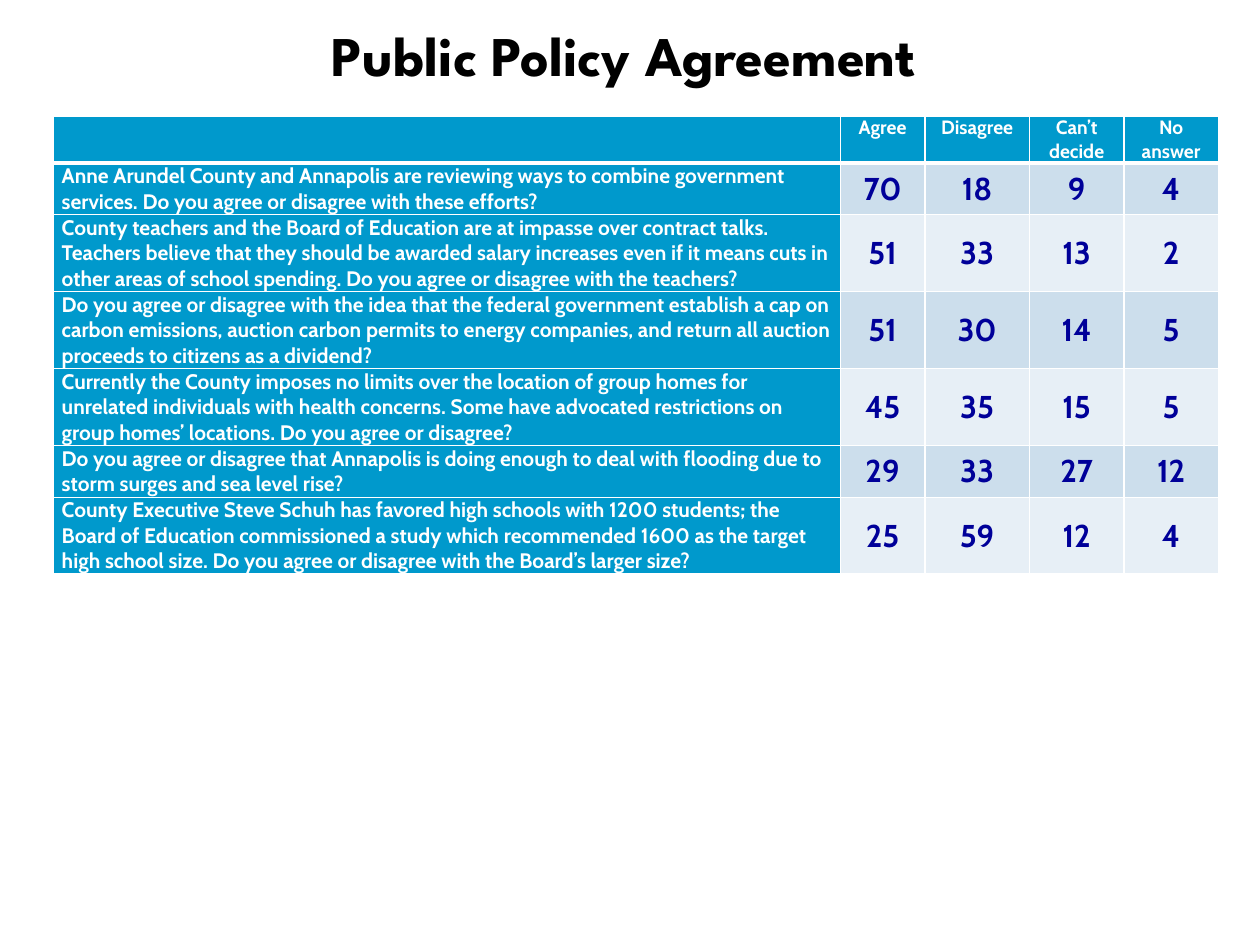
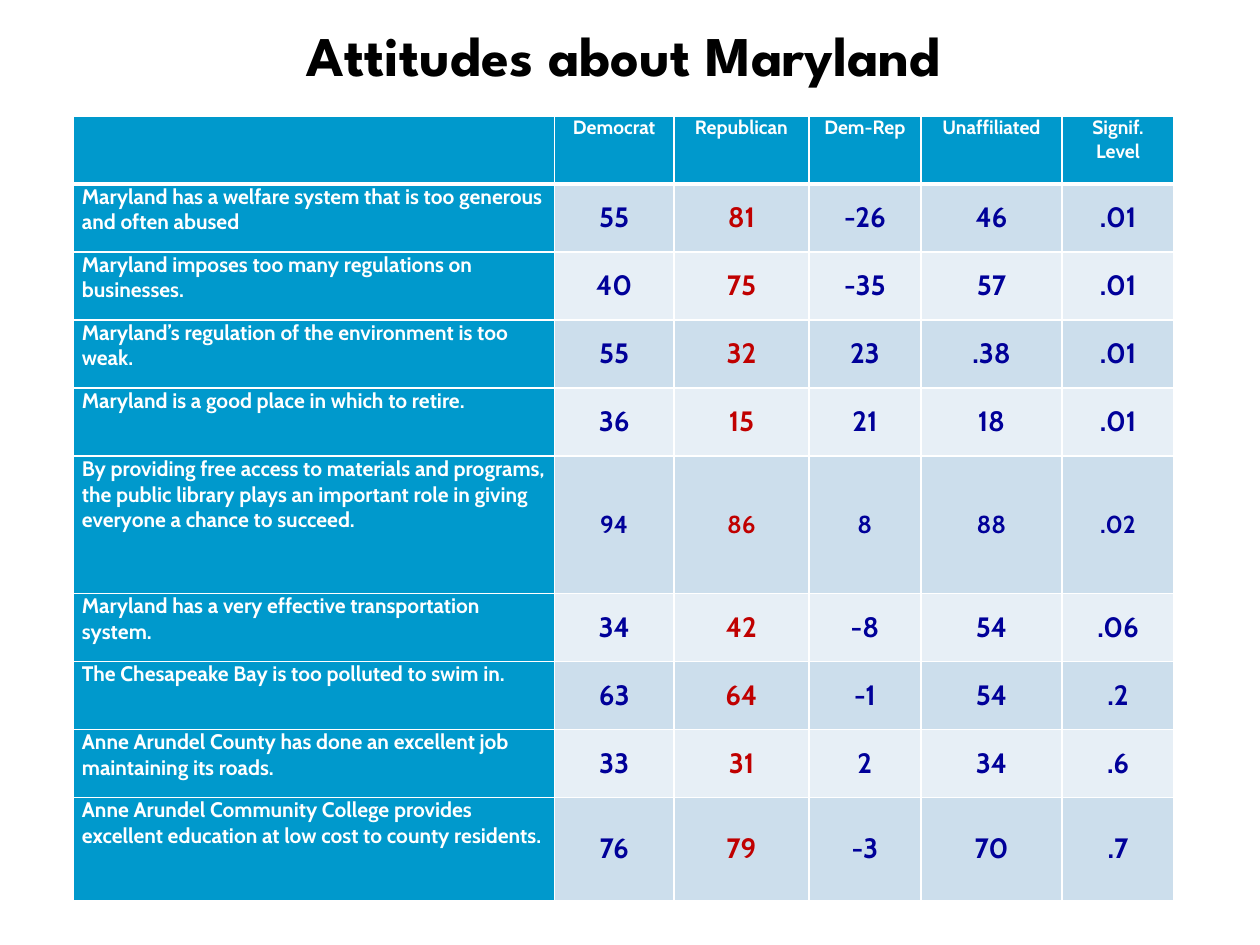
import pptx
import pptx.util
import pptx.dml.color
import pptx.enum.text
import pptx.oxml
import pptx.oxml.ns

Inches = pptx.util.Inches
Pt = pptx.util.Pt
ALIGN = pptx.enum.text.PP_ALIGN
ANCHOR = pptx.enum.text.MSO_ANCHOR

# Shared look
HUES = {"head": "0099CC", "odd": "CCDEEC", "even": "E7EFF6", "white": "FFFFFF",
        "black": "000000", "navy": "000099", "red": "C00000"}
TITLE = {"name": "League Spartan", "size": Pt(32), "bold": True}
CELL = {"name": "Cabin", "bold": True}
INSET = {"margin_left": Inches(0.07), "margin_right": Inches(0.07),
         "margin_top": 0, "margin_bottom": 0}

# Slide content: each row is a question and its figures
POLICY_HEAD = ["", "Agree", "Disagree", "Can’t decide", "No answer"]
POLICY = [
    ("Anne Arundel County and Annapolis are reviewing ways to combine government "
     "services. Do you agree or disagree with these efforts?", "70 18 9 4"),
    ("County teachers and the Board of Education are at impasse over contract talks. "
     "Teachers believe that they should be awarded salary increases even if it means "
     "cuts in other areas of school spending. Do you agree or disagree with the "
     "teachers?", "51 33 13 2"),
    ("Do you agree or disagree with the idea that the federal government establish a "
     "cap on carbon emissions, auction carbon permits to energy companies, and return "
     "all auction proceeds to citizens as a dividend?", "51 30 14 5"),
    ("Currently the County imposes no limits over the location of group homes for "
     "unrelated individuals with health concerns. Some have advocated restrictions on "
     "group homes’ locations. Do you agree or disagree?", "45 35 15 5"),
    ("Do you agree or disagree that Annapolis is doing enough to deal with flooding "
     "due to storm surges and sea level rise?", "29 33 27 12"),
    ("County Executive Steve Schuh has favored high schools with 1200 students; the "
     "Board of Education commissioned a study which recommended 1600 as the target "
     "high school size. Do you agree or disagree with the Board’s larger size?",
     "25 59 12 4"),
]
STATE_HEAD = ["", "Democrat", "Republican", "Dem-Rep", "Unaffiliated", "Signif. Level"]
STATE = [
    ("Maryland has a welfare system that is too generous and often abused",
     "55 81 -26 46 .01"),
    ("Maryland imposes too many regulations on businesses.", "40 75 -35 57 .01"),
    ("Maryland’s regulation of the environment is too weak.", "55 32 23 .38 .01"),
    ("Maryland is a good place in which to retire.", "36 15 21 18 .01"),
    ("By providing free access to materials and programs, the public library plays an "
     "important role in giving everyone a chance to succeed.", "94 86 8 88 .02"),
    ("Maryland has a very effective transportation system.", "34 42 -8 54 .06"),
    ("The Chesapeake Bay is too polluted to swim in.", "63 64 -1 54 .2"),
    ("Anne Arundel County has done an excellent job maintaining its roads.",
     "33 31 2 34 .6"),
    ("Anne Arundel Community College provides excellent education at low cost to "
     "county residents.", "76 79 -3 70 .7"),
]


def assign(item, values):
    for key, value in values.items():
        setattr(item, key, value)


def paint(target, hue):
    target.rgb = pptx.dml.color.RGBColor.from_string(HUES[hue])


def write(par, text, form, hue, align):
    par.alignment = align
    if text:
        run = par.add_run()
        run.text = text
        assign(run.font, form)
        paint(run.font.color, hue)


def add_page(deck, text):
    page = deck.slides.add_slide(deck.slide_layouts[5])
    title = page.shapes.title
    assign(title, {"left": Inches(0.58), "top": Inches(0.17),
                   "width": Inches(8.75), "height": Inches(0.58)})
    assign(title.text_frame, {"vertical_anchor": ANCHOR.BOTTOM, "word_wrap": True,
                              "auto_size": pptx.enum.text.MSO_AUTO_SIZE.NONE})
    write(title.text_frame.paragraphs[0], text, TITLE, "black", ALIGN.CENTER)
    return page


def add_edges(cell, widths):
    """Draw white borders; widths maps each side to points."""
    props = cell._tc.get_or_add_tcPr()
    for side, width in widths.items():
        props.append(pptx.oxml.parse_xml(
            f'<a:ln{side} {pptx.oxml.ns.nsdecls("a")} w="{Pt(width)}"><a:solidFill>'
            f'<a:srgbClr val="{HUES["white"]}"/></a:solidFill></a:ln{side}>'))


def fill_cell(cell, text, row, col, size, hue):
    top = row == 0
    figure = not top and col > 0
    assign(cell, INSET)
    cell.vertical_anchor = ANCHOR.MIDDLE if figure else ANCHOR.TOP
    add_edges(cell, {"L": 1, "R": 1, "T": 3 if row == 1 else 1, "B": 3 if top else 1})
    cell.fill.solid()
    band = "odd" if row % 2 else "even"
    paint(cell.fill.fore_color, band if figure else "head")
    write(cell.text_frame.paragraphs[0], text, {**CELL, "size": Pt(size)}, hue,
          ALIGN.CENTER if top or figure else ALIGN.LEFT)


def add_grid(page, left, widths, heights, heads, items, size, small=(), reds=()):
    """Rows in small have 14-point figures; columns in reds have red ones."""
    rows = [heads] + [[ask, *nums.split()] for ask, nums in items]
    grid = page.shapes.add_table(len(rows), len(heads), Inches(left), Inches(0.92),
                                 Inches(sum(widths)), Inches(sum(heights))).table
    for col, width in enumerate(widths):
        grid.columns[col].width = Inches(width)
    for row, texts in enumerate(rows):
        grid.rows[row].height = Inches(heights[row])
        for col, text in enumerate(texts):
            if row == 0:
                points, hue = 11, "white"
            elif col == 0:
                points, hue = 12, "white"
            else:
                points = 14 if row in small else size
                hue = "red" if col in reds else "navy"
            fill_cell(grid.cell(row, col), text, row, col, points, hue)


def main():
    deck = pptx.Presentation()
    deck.slide_width, deck.slide_height = Inches(10), Inches(7.5)

    # Policy questions
    page = add_page(deck, "Public Policy Agreement")
    add_grid(page, 0.42, [6.25, 0.67, 0.83, 0.75, 0.75],
             [0.37, 0.41, 0.61, 0.61, 0.61, 0.41, 0.61], POLICY_HEAD, POLICY, 18)

    # Attitudes by party
    page = add_page(deck, "Attitudes about Maryland")
    add_grid(page, 0.58, [3.82, 0.95, 1.07, 0.89, 1.12, 0.89],
             [0.54] * 5 + [1.09] + [0.54] * 3 + [0.82], STATE_HEAD, STATE, 16,
             small=[5], reds=[2])

    deck.save("out.pptx")


if __name__ == "__main__":
    main()
